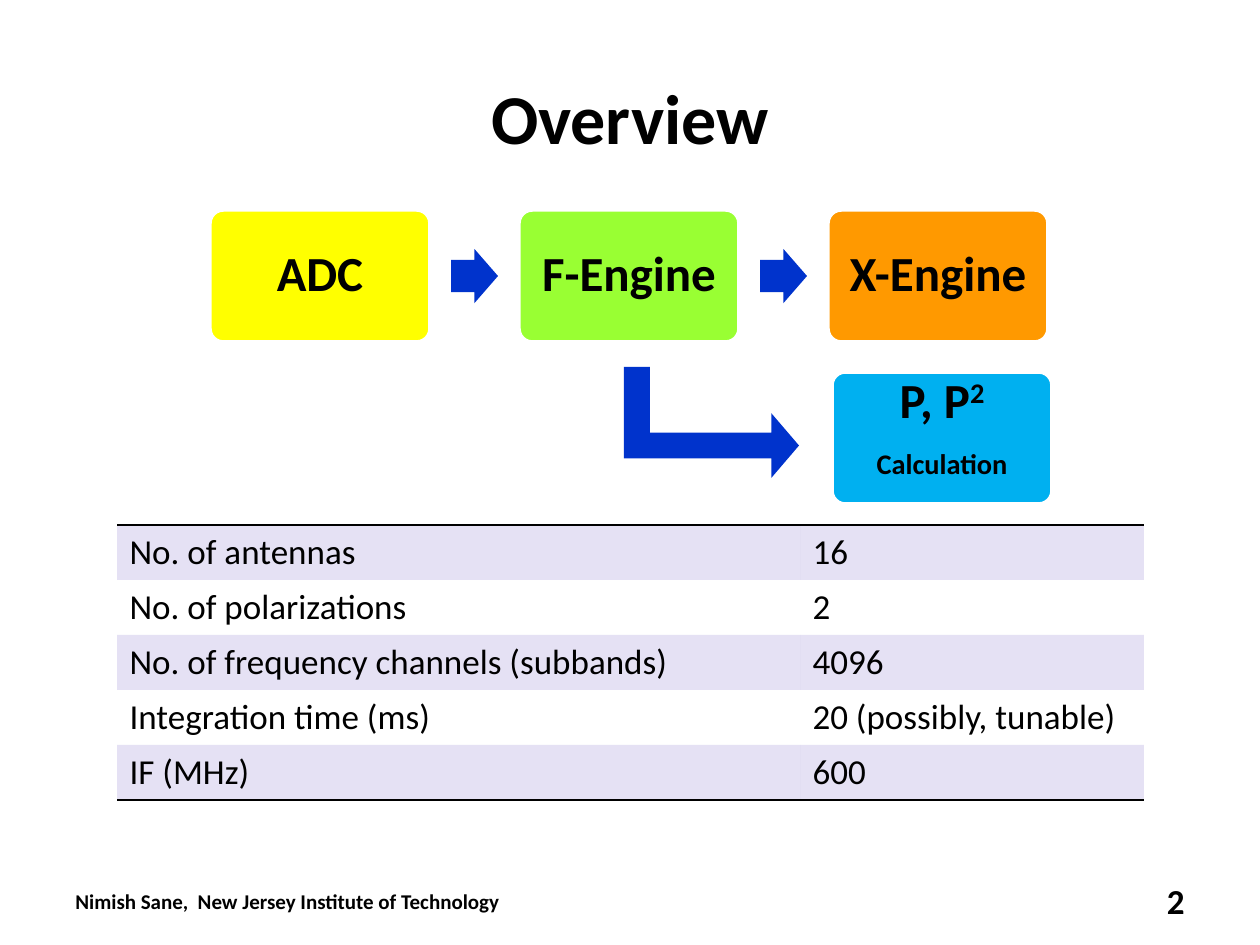
from lxml import etree
from pptx import Presentation
from pptx.dml.color import RGBColor
from pptx.enum.shapes import MSO_SHAPE
from pptx.enum.text import MSO_ANCHOR, PP_ALIGN
from pptx.oxml import parse_xml
from pptx.oxml.ns import nsdecls, qn
from pptx.util import Pt

ROUNDED = MSO_SHAPE.ROUNDED_RECTANGLE
RIGHT_ARROW = MSO_SHAPE.RIGHT_ARROW
BENT_ARROW = MSO_SHAPE.BENT_UP_ARROW
MIDDLE = MSO_ANCHOR.MIDDLE
LEFT, CENTER, RIGHT = PP_ALIGN.LEFT, PP_ALIGN.CENTER, PP_ALIGN.RIGHT

BLACK = RGBColor(0x00, 0x00, 0x00)
WHITE = RGBColor(0xFF, 0xFF, 0xFF)
YELLOW = RGBColor(0xFF, 0xFF, 0x00)
GREEN = RGBColor(0x99, 0xFF, 0x33)
ORANGE = RGBColor(0xFF, 0x99, 0x00)
SKY = RGBColor(0x00, 0xB0, 0xF0)
BLUE = RGBColor(0x00, 0x33, 0xCC)
VIOLET = RGBColor(0x7E, 0x6B, 0xC9)
FONT = "Calibri"
NO_GRID_STYLE = "{2D5ABB26-0587-4C30-8999-92F81FD0307C}"

# Content
TITLE = "Overview"
STAGES = [("ADC", YELLOW), ("F-Engine", GREEN), ("X-Engine", ORANGE)]
POWER, EXPONENT, POWER_NOTE = "P, P", "2", "Calculation"
PARAMETERS = [
    ("No. of antennas", "16"),
    ("No. of polarizations", "2"),
    ("No. of frequency channels (subbands)", "4096"),
    ("Integration time (ms)", "20 (possibly, tunable)"),
    ("IF (MHz)", "600"),
]
FOOTERS = [
    ("Nimish Sane,  New Jersey Institute of Technology", (63, 876, 478, 50), 12, LEFT),
    ("2", (903, 876, 294, 50), 20, RIGHT),
]

# Layout in px, 126 to the inch
STAGE_LEFT, STAGE_TOP, STAGE_STEP = 210, 210, 309
BOX_WIDTH, BOX_HEIGHT, BOX_INSET = 220, 132, 15
ARROW_WIDTH, ARROW_HEIGHT = 47, 54
COLUMNS, ROW_HEIGHT = (683, 344), 55


def px(length):
    return round(length * 914400 / 126)


def place(*lengths):
    return [px(length) for length in lengths]


def style(para, size, bold=True, align=LEFT):
    para.alignment = align
    for run in para.runs:
        run.font.name, run.font.size, run.font.bold = FONT, Pt(size), bold
        run.font.color.rgb = BLACK


def add_shape(kind, bounds, color, adjustments):
    shape = page.shapes.add_shape(kind, *place(*bounds))
    shape.shadow.inherit = False
    shape.fill.solid()
    shape.fill.fore_color.rgb = color
    shape.line.fill.background()
    for index, value in enumerate(adjustments):
        shape.adjustments[index] = value
    return shape


def add_box(left, top, text, color):
    box = add_shape(ROUNDED, (left, top, BOX_WIDTH, BOX_HEIGHT), color, [0.1])
    box.line.color.rgb = WHITE
    box.line.width = Pt(2)
    frame = box.text_frame
    frame.margin_left = frame.margin_right = px(BOX_INSET)
    frame.margin_top = frame.margin_bottom = px(BOX_INSET)
    frame.vertical_anchor = MIDDLE
    frame.text = text
    return frame


def style_box(frame):
    for para in frame.paragraphs:
        style(para, 28, align=CENTER)
        para.line_spacing = 0.9
        para.space_after = Pt(10)


def add_border(cell, side):
    border = parse_xml(
        f'<a:{side} {nsdecls("a")} w="12700"><a:solidFill>'
        f'<a:srgbClr val="{BLACK}"/></a:solidFill></a:{side}>')
    cell._tc.get_or_add_tcPr().insert(0, border)


deck = Presentation()
deck.slide_width, deck.slide_height = place(1260, 945)
page = deck.slides.add_slide(deck.slide_layouts[5])

# Title
title = page.shapes.title
title.left, title.top, title.width, title.height = place(63, 38, 1134, 158)
title.text_frame.text = TITLE
title.text_frame.vertical_anchor = MIDDLE
style(title.text_frame.paragraphs[0], 40, align=CENTER)

# Footer and page number
for text, bounds, size, align in FOOTERS:
    frame = page.shapes.add_textbox(*place(*bounds)).text_frame
    frame.word_wrap = True
    frame.vertical_anchor = MIDDLE
    frame.text = text
    style(frame.paragraphs[0], size, align=align)

# Parameter table with tinted odd rows
holder = page.shapes.add_table(
    len(PARAMETERS), len(COLUMNS),
    *place(117, 525, sum(COLUMNS), ROW_HEIGHT * len(PARAMETERS)))
table = holder.table
table.first_row = table.horz_banding = False
table._tbl.tblPr.find(qn("a:tableStyleId")).text = NO_GRID_STYLE
for column, width in zip(table.columns, COLUMNS):
    column.width = px(width)
for row_index, values in enumerate(PARAMETERS):
    table.rows[row_index].height = px(ROW_HEIGHT)
    for column_index, value in enumerate(values):
        cell = table.cell(row_index, column_index)
        cell.text = value
        style(cell.text_frame.paragraphs[0], 20, bold=False)
        if row_index % 2:
            cell.fill.background()
        else:
            cell.fill.solid()
            cell.fill.fore_color.rgb = VIOLET
            tint = cell._tc.tcPr.find(".//" + qn("a:srgbClr"))
            etree.SubElement(tint, qn("a:alpha")).set("val", "20000")
        if row_index == 0:
            add_border(cell, "lnT")
        if row_index == len(PARAMETERS) - 1:
            add_border(cell, "lnB")

# Processing chain, an arrow centred in each gap
for index, (text, color) in enumerate(STAGES):
    left = STAGE_LEFT + index * STAGE_STEP
    style_box(add_box(left, STAGE_TOP, text, color))
    if index < len(STAGES) - 1:
        arrow_left = left + (BOX_WIDTH + STAGE_STEP - ARROW_WIDTH) / 2
        arrow_top = STAGE_TOP + (BOX_HEIGHT - ARROW_HEIGHT) / 2
        add_shape(RIGHT_ARROW, (arrow_left, arrow_top, ARROW_WIDTH, ARROW_HEIGHT),
                  BLUE, [0.6, 0.5])

# Power calculation, branching from the F-Engine
frame = add_box(832, 372, POWER, SKY)
exponent = frame.paragraphs[0].add_run()
exponent.text = EXPONENT
note = frame.add_paragraph()
note.text = POWER_NOTE
style_box(frame)
for run in (exponent, note.runs[0]):
    run.font._element.set("baseline", "30000")
branch = add_shape(BENT_ARROW, (656, 335, 111, 175), BLUE, [0.232, 0.292, 0.25])
branch.rotation = 90

deck.save("out.pptx")
